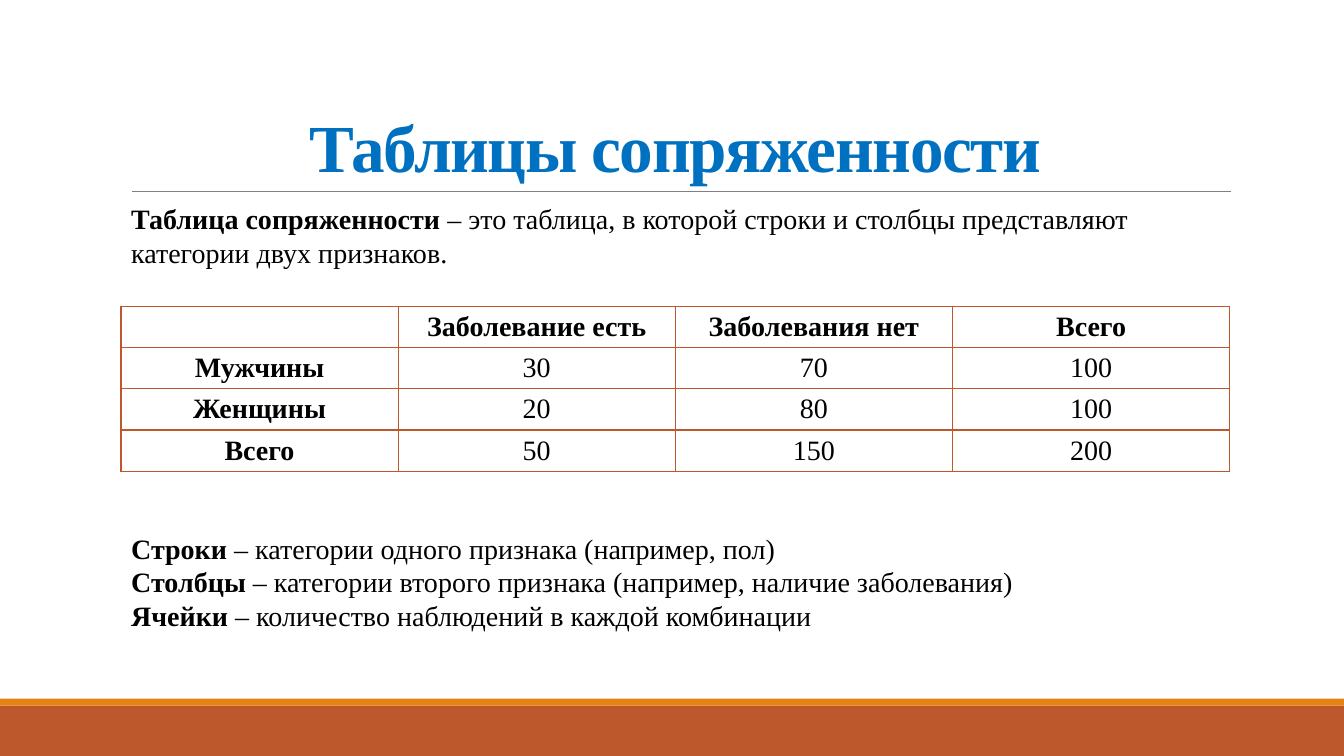
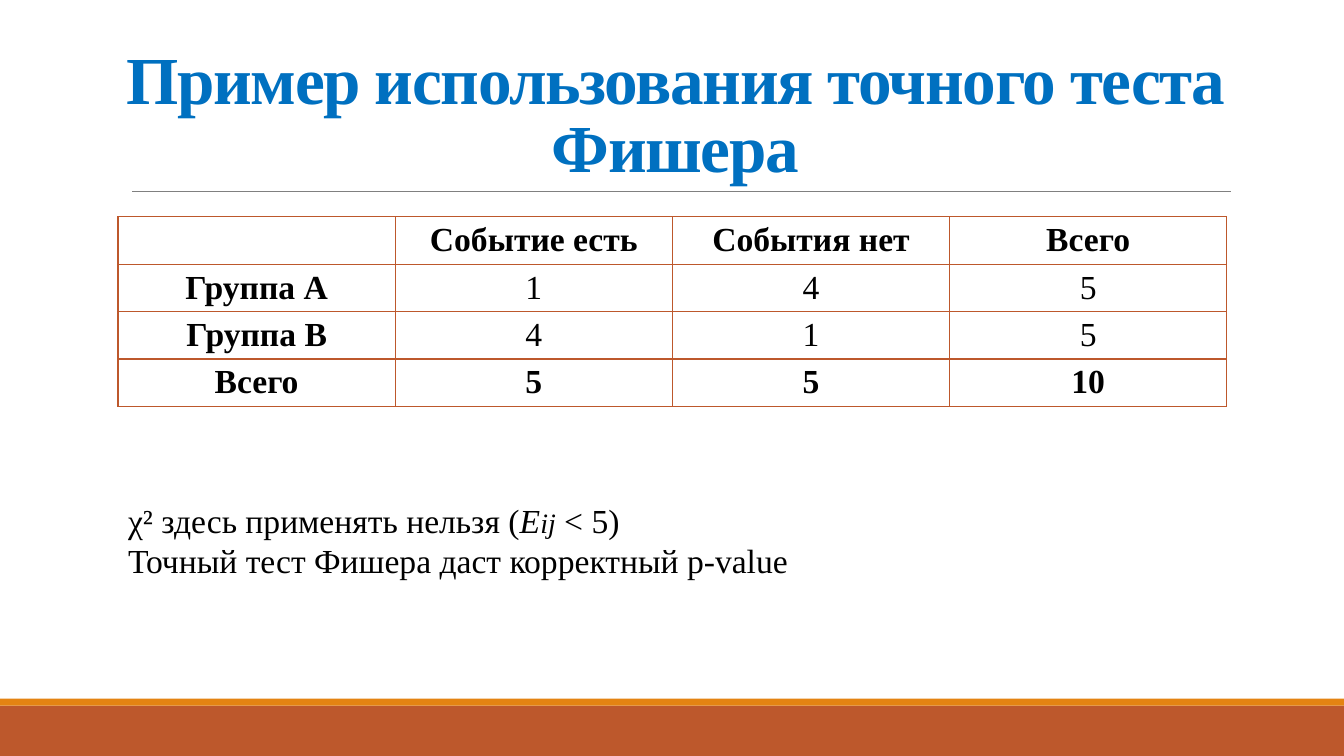
"""Build two slides on contingency tables and Fisher's exact test."""
from lxml import etree
from pptx import Presentation, util as u
from pptx.dml.color import RGBColor
from pptx.enum import shapes, text
from pptx.oxml import ns

BLUE = RGBColor(0x00, 0x70, 0xC0)
BLACK = RGBColor(0x00, 0x00, 0x00)
GRAY = RGBColor(0x80, 0x80, 0x80)
RUST = RGBColor(0xBD, 0x58, 0x2C)
GOLD = RGBColor(0xE4, 0x83, 0x12)
FONT = "Times New Roman"
PAD = u.Inches(0.05)
CENTER = text.PP_ALIGN.CENTER
MIDDLE = text.MSO_ANCHOR.MIDDLE


def write(frame, paras, size=20, color=BLACK, bold=False, align=None, lead=None, track=None):
    """Fill a frame with paragraphs, each a list of (text, format) runs."""
    for i, runs in enumerate(paras):
        para = frame.add_paragraph() if i else frame.paragraphs[0]
        para.alignment = align
        para.line_spacing = lead
        for words, look in runs:
            run = para.add_run()
            run.text = words
            font = run.font
            font.name = FONT
            font.size = u.Pt(look.get("size", size))
            font.bold = look.get("bold", bold)
            font.italic = look.get("italic", False)
            font.color.rgb = color
            if track:
                run._r.get_or_add_rPr().set("spc", str(track * 100))


class Deck:
    """Hold the shared style and the current slide; lengths are percentages."""

    def __init__(self):
        self.prs = Presentation()
        self.prs.slide_width = u.Inches(13.33)
        self.prs.slide_height = u.Inches(7.5)
        self.slide = None

    def x(self, share):
        return round(self.prs.slide_width * share / 100)

    def y(self, share):
        return round(self.prs.slide_height * share / 100)

    def box(self, left, top, width, height):
        return self.x(left), self.y(top), self.x(width), self.y(height)

    def start(self, title):
        self.slide = self.prs.slides.add_slide(self.prs.slide_layouts[5])
        self.band(93.33, 6.67, RUST)
        self.band(92.4, 0.93, GOLD)
        self.rule(9.83, 91.58, 25.33)
        self.title(title)

    def band(self, top, height, color):
        shape = self.slide.shapes.add_shape(
            shapes.MSO_SHAPE.RECTANGLE, *self.box(0, top, 100, height))
        shape.shadow.inherit = False
        shape.fill.solid()
        shape.fill.fore_color.rgb = color
        shape.line.fill.background()

    def rule(self, left, right, top):
        line = self.slide.shapes.add_connector(
            shapes.MSO_CONNECTOR.STRAIGHT,
            self.x(left), self.y(top), self.x(right), self.y(top))
        line.line.color.rgb = GRAY
        line.line.width = u.Pt(0.5)
        etree.SubElement(line._element.spPr, ns.qn("a:effectLst"))

    def inset(self, frame, anchor):
        frame.word_wrap = True
        frame.auto_size = text.MSO_AUTO_SIZE.NONE
        frame.vertical_anchor = anchor
        frame.margin_left = frame.margin_right = PAD
        frame.margin_top = frame.margin_bottom = PAD

    def title(self, words):
        shape = self.slide.shapes.title
        shape.left, shape.top, shape.width, shape.height = self.box(9, 4.13, 82.5, 21.2)
        self.inset(shape.text_frame, text.MSO_ANCHOR.BOTTOM)
        write(shape.text_frame, [[(words, {})]], size=48, color=BLUE,
              bold=True, align=CENTER, lead=0.85, track=-1)

    def note(self, left, top, height, paras, size):
        shape = self.slide.shapes.add_textbox(*self.box(left, top, 81.75, height))
        self.inset(shape.text_frame, text.MSO_ANCHOR.TOP)
        write(shape.text_frame, paras, size=size)

    def border(self, cell):
        props = cell._tc.get_or_add_tcPr()
        for side in ("lnL", "lnR", "lnT", "lnB"):
            line = etree.SubElement(props, ns.qn("a:" + side), w=str(u.Pt(1)))
            fill = etree.SubElement(line, ns.qn("a:solidFill"))
            etree.SubElement(fill, ns.qn("a:srgbClr"), val=str(RUST))

    def table(self, left, top, pitch, rows, size, total=False):
        count = len(rows)
        table = self.slide.shapes.add_table(
            count, len(rows[0]), *self.box(left, top, 82.5, pitch * count)).table
        table.first_row = table.horz_banding = False
        for r, row in enumerate(rows):
            for c, words in enumerate(row):
                cell = table.cell(r, c)
                self.border(cell)
                cell.fill.background()
                cell.vertical_anchor = MIDDLE
                cell.margin_left = cell.margin_right = PAD
                cell.margin_top = cell.margin_bottom = PAD
                if words:
                    bold = r == 0 or c == 0 or (total and r == count - 1)
                    write(cell.text_frame, [[(words, {})]], size=size,
                          bold=bold, align=CENTER)


def term(name, rest):
    """Return a bold term followed by its plain definition."""
    return [(name, {"bold": True}), (" – " + rest, {})]


def main():
    """Build and save both slides."""
    deck = Deck()
    deck.start("Таблицы сопряженности")
    deck.table(9, 40.53, 5.45, [
        ("", "Заболевание есть", "Заболевания нет", "Всего"),
        ("Мужчины", "30", "70", "100"),
        ("Женщины", "20", "80", "100"),
        ("Всего", "50", "150", "200"),
    ], 20)
    deck.note(9.38, 69.6, 14, [
        term("Строки", "категории одного признака (например, пол)"),
        term("Столбцы", "категории второго признака (например, наличие заболевания)"),
        term("Ячейки", "количество наблюдений в каждой комбинации"),
    ], 20)
    deck.note(9.38, 26, 9.73, [
        term("Таблица сопряженности", "это таблица, в которой строки и столбцы "
             "представляют категории двух признаков."),
    ], 20)

    deck.start("Пример использования точного теста Фишера")
    deck.table(8.78, 28.67, 6.27, [
        ("", "Событие есть", "События нет", "Всего"),
        ("Группа A", "1", "4", "5"),
        ("Группа B", "4", "1", "5"),
        ("Всего", "5", "5", "10"),
    ], 24, total=True)
    deck.note(9.15, 65.47, 11.2, [
        [("χ² здесь применять нельзя (", {}), ("E", {"italic": True}),
         ("ij", {"italic": True, "size": 20}), (" < 5)", {})],
        [("Точный тест Фишера даст корректный p-value", {})],
    ], 24)
    deck.prs.save("out.pptx")


if __name__ == "__main__":
    main()
